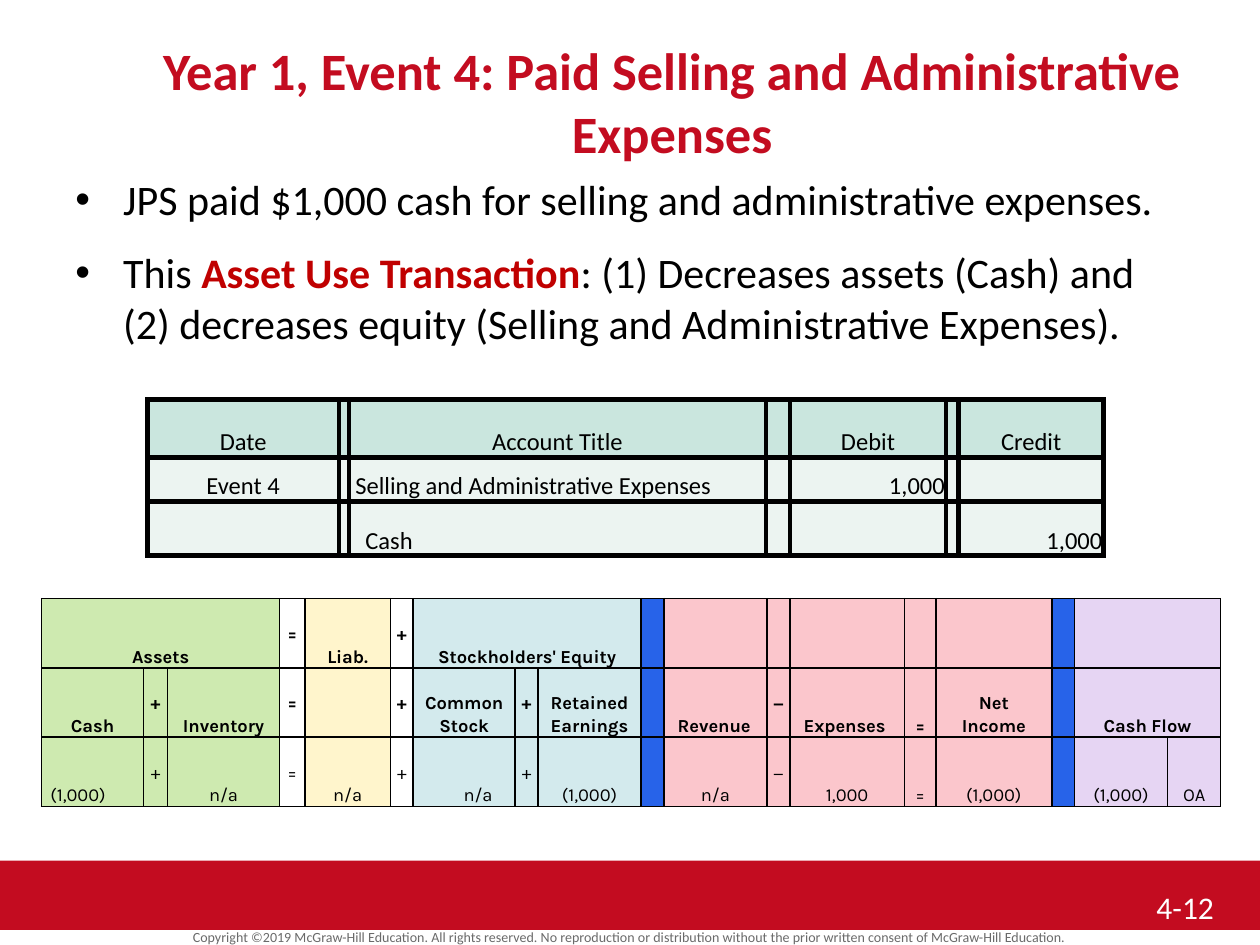
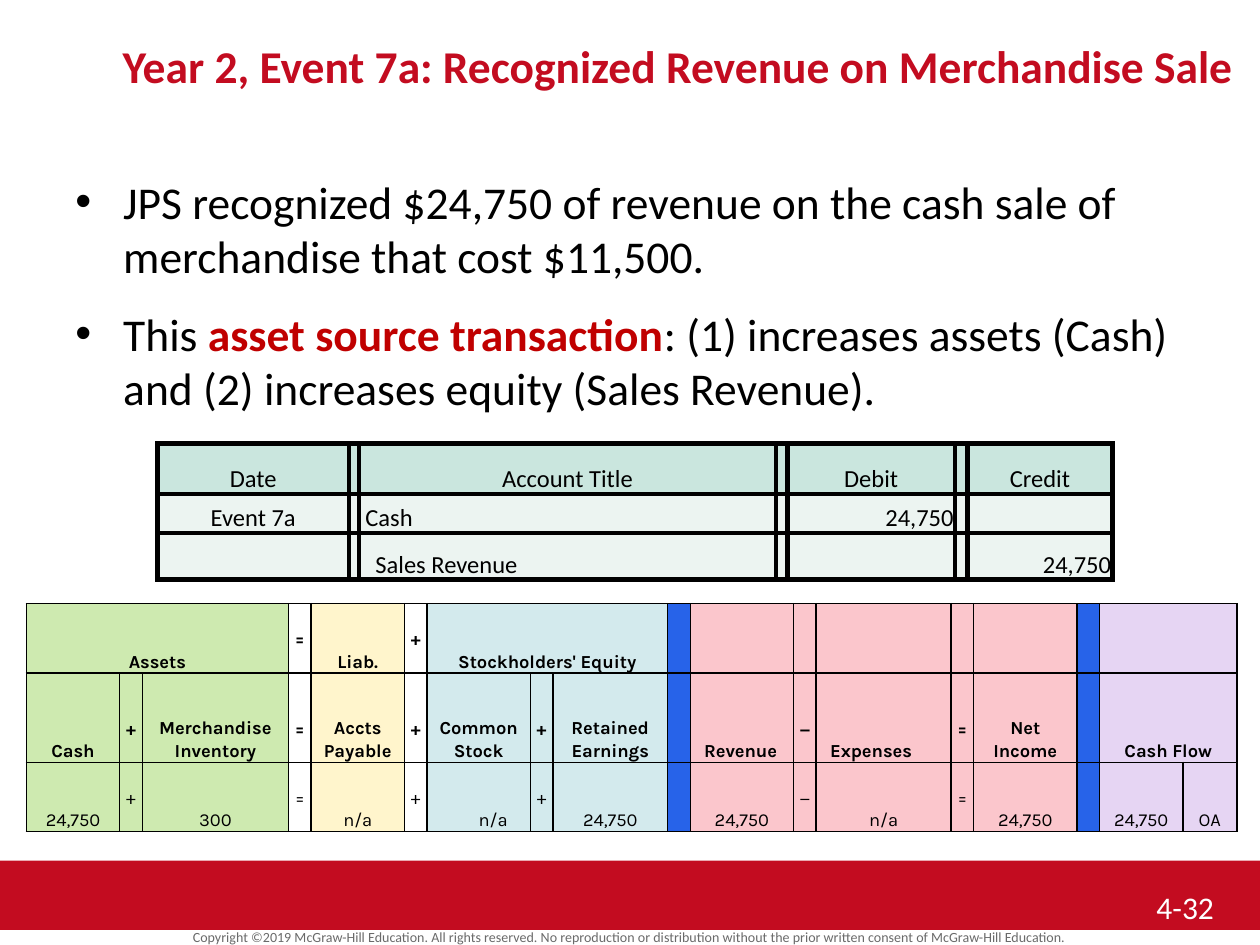
from lxml import etree
from pptx import Presentation
from pptx.dml.color import RGBColor
from pptx.enum import shapes, text
from pptx.oxml import ns
from pptx.util import Inches, Pt

COLORS = {
    "red": "C30C20", "accent": "C00000", "black": "000000", "white": "FFFFFF",
    "grey": "6A6A6A", "head": "CAE6DE", "entry": "ECF4F1", "asset": "CEEAB0",
    "liab": "FFF5CC", "equity": "D3EAED", "divider": "2763E9",
    "income": "FBC6CC", "flow": "E6D5F3",
}
LEFT, CENTER, RIGHT = text.PP_ALIGN.LEFT, text.PP_ALIGN.CENTER, text.PP_ALIGN.RIGHT
COPYRIGHT = ("Copyright ©2019 McGraw-Hill Education. All rights reserved. No reproduction "
             "or distribution without the prior written consent of McGraw-Hill Education.")

# Ledger columns: fill, operators and headings shared by both slides
LEDGER_FILLS = (["asset"] * 3 + [None, "liab", None] + ["equity"] * 3 + ["divider"]
                + ["income"] * 5 + ["divider"] + ["flow"] * 2)
OPERATORS = {1: "+", 3: "=", 5: "+", 7: "+", 11: "−", 13: "="}
GROUPS = {0: "Assets", 3: "=", 4: "Liab.", 5: "+", 6: "Stockholders' Equity"}
HEADINGS = {0: "Cash", 6: "Common\vStock", 8: "Retained\vEarnings", 10: "Revenue",
            12: "Expenses", 14: "Net\vIncome", 16: "Cash Flow"}
SPANS = [(0, 0, 2), (0, 6, 8), (0, 16, 17), (1, 16, 17)]

SLIDES = [
    {
        "number": "4-12", "title": "Year 1, Event 4: Paid Selling and Administrative Expenses",
        "title_size": 30, "title_left": 0.75, "body_size": 24,
        "bullets": [
            ["JPS paid $1,000 cash for selling and administrative expenses."],
            ["This ", "Asset Use Transaction", ": (1) Decreases assets (Cash) and (2) decreases "
             "equity (Selling and Administrative Expenses)."],
        ],
        "journal_at": (1.17, 3.17), "journal_rows": [0.46, 0.35, 0.43],
        "journal_cols": [1.52, 0.08, 3.31, 0.19, 1.24, 0.1, 1.15],
        "event": "Event 4", "debit": "Selling and Administrative Expenses",
        "credit": "Cash", "amount": "1,000",
        "ledger_at": (0.33, 4.75), "ledger_rows": [0.55, 0.55, 0.55],
        "ledger_cols": [0.81, 0.19, 0.89, 0.2, 0.68, 0.18, 0.81, 0.18, 0.82, 0.18,
                        0.82, 0.18, 0.91, 0.25, 0.92, 0.18, 0.74, 0.42],
        "headings": {2: "Inventory"},
        "effects": {0: "(1,000)", 2: "n/a", 4: "n/a", 6: "n/a", 8: "(1,000)", 10: "n/a",
                    12: "1,000", 14: "(1,000)", 16: "(1,000)", 17: "OA"},
        "cash_align": LEFT,
    },
    {
        "number": "4-32", "title": "Year 2, Event 7a: Recognized Revenue on Merchandise Sale",
        "title_size": 26, "title_left": 0.8, "body_size": 26,
        "bullets": [
            ["JPS recognized $24,750 of revenue on the cash sale of merchandise "
             "that cost $11,500."],
            ["This ", "asset source transaction", ": (1) increases assets (Cash) and "
             "(2) increases equity (Sales Revenue)."],
        ],
        "journal_at": (1.25, 3.52), "journal_rows": [0.4, 0.31, 0.37],
        "journal_cols": [1.52, 0.08, 3.31, 0.09, 1.33, 0.1, 1.15],
        "event": "Event 7a", "debit": "Cash", "credit": "Sales Revenue", "amount": "24,750",
        "ledger_at": (0.21, 4.79), "ledger_rows": [0.55, 0.71, 0.55],
        "ledger_cols": [0.74, 0.18, 1.16, 0.18, 0.74, 0.18, 0.82, 0.18, 0.91, 0.18,
                        0.82, 0.18, 1.07, 0.18, 0.82, 0.18, 0.66, 0.43],
        "headings": {2: "Merchandise\vInventory", 4: "Accts\vPayable"},
        "effects": {0: "24,750", 2: "300", 4: "n/a", 6: "n/a", 8: "24,750", 10: "24,750",
                    12: "n/a", 14: "24,750", 16: "24,750", 17: "OA"},
        "cash_align": CENTER,
    },
]


def write(tf, runs, size, color, align=LEFT, bold=False, font="Calibri", p=None):
    """Fill one paragraph; a second run is the red, bold key term."""
    tf.word_wrap = True
    p = p or tf.paragraphs[0]
    p.alignment = align
    if len(runs) == 1:
        p.text = runs[0]
    else:
        for part in runs:
            p.add_run().text = part
    for i, r in enumerate(p.runs):
        key = len(runs) > 1 and i == 1
        r.font.name, r.font.size, r.font.bold = font, Pt(size), bold or key
        r.font.color.rgb = RGBColor.from_string(COLORS["accent" if key else color])
    return p


def add_grid(s, at, cols, rows, line):
    """Add a plain table with black borders on every cell."""
    table = s.shapes.add_table(len(rows), len(cols), Inches(at[0]), Inches(at[1]),
                               Inches(sum(cols)), Inches(sum(rows))).table
    table.first_row = table.horz_banding = False
    for col, width in zip(table.columns, cols):
        col.width = Inches(width)
    for row, height in zip(table.rows, rows):
        row.height = Inches(height)
    for cell in table.iter_cells():
        cell.vertical_anchor = text.MSO_ANCHOR.BOTTOM
        cell.margin_left = cell.margin_right = Inches(0.01)
        cell.margin_top = cell.margin_bottom = 0
        cell.fill.background()
        tc_pr = cell._tc.get_or_add_tcPr()
        for i, side in enumerate(("lnL", "lnR", "lnT", "lnB")):
            ln = etree.Element(ns.qn("a:" + side), w=str(Pt(line)))
            fill = etree.SubElement(ln, ns.qn("a:solidFill"))
            etree.SubElement(fill, ns.qn("a:srgbClr"), val=COLORS["black"])
            tc_pr.insert(i, ln)
    return table


prs = Presentation()
prs.slide_width, prs.slide_height = Inches(10), Inches(7.5)

for data in SLIDES:
    s = prs.slides.add_slide(prs.slide_layouts[6])

    # Red band, copyright line and slide number
    sp = s.shapes.add_shape(shapes.MSO_SHAPE.RECTANGLE, 0, Inches(6.83), Inches(10), Inches(0.55))
    sp.shadow.inherit = False
    sp.fill.solid()
    sp.fill.fore_color.rgb = RGBColor.from_string(COLORS["red"])
    sp.line.fill.background()
    tf = s.shapes.add_textbox(0, Inches(7.34), Inches(10), Inches(0.19)).text_frame
    tf.margin_top = tf.margin_bottom = 0
    tf.vertical_anchor = text.MSO_ANCHOR.MIDDLE
    write(tf, [COPYRIGHT], 8, "grey", CENTER)
    tf = s.shapes.add_textbox(Inches(9.08), Inches(7), Inches(0.92), Inches(0.42)).text_frame
    write(tf, [data["number"]], 18, "white")

    # Title
    tf = s.shapes.add_textbox(Inches(data["title_left"]), Inches(0.25),
                              Inches(9.17), Inches(0.67)).text_frame
    write(tf, [data["title"]], data["title_size"], "red", CENTER, bold=True)

    # Bullets
    tf = s.shapes.add_textbox(Inches(0.5), Inches(1.33), Inches(9), Inches(5.17)).text_frame
    for i, runs in enumerate(data["bullets"]):
        p = tf.add_paragraph() if i else tf.paragraphs[0]
        p_pr = p._p.get_or_add_pPr()
        p_pr.set("marL", str(Inches(0.38)))
        p_pr.set("indent", str(Inches(-0.38)))
        etree.SubElement(p_pr, ns.qn("a:buFont"), typeface="Arial")
        etree.SubElement(p_pr, ns.qn("a:buChar"), char="•")
        p.space_before, p.space_after = Pt(5 if i else 0), Pt(8)
        write(tf, runs, data["body_size"], "black", p=p)

    # Journal entry: narrow empty columns separate the fields
    journal = add_grid(s, data["journal_at"], data["journal_cols"], data["journal_rows"], 3)
    entries = [["Date", "Account Title", "Debit", "Credit"],
               [data["event"], data["debit"], data["amount"], ""],
               ["", data["credit"], "", data["amount"]]]
    for r in range(3):
        for c in range(7):
            cell = journal.cell(r, c)
            cell.fill.solid()
            cell.fill.fore_color.rgb = RGBColor.from_string(COLORS["entry" if r else "head"])
            value = "" if c % 2 else entries[r][c // 2]
            if not value:
                continue
            align = CENTER if r == 0 or c == 0 else LEFT if c == 2 else RIGHT
            if align == LEFT:
                cell.margin_left = Inches(0.05 if r == 1 else 0.13)
            write(cell.text_frame, [value], 14, "black", align)

    # Financial statements effects
    widths = data["ledger_cols"]
    ledger = add_grid(s, data["ledger_at"], widths, data["ledger_rows"], 1)
    lines = [GROUPS, {**OPERATORS, **HEADINGS, **data["headings"]},
             {**OPERATORS, **data["effects"]}]
    for r, line in enumerate(lines):
        for c, fill in enumerate(LEDGER_FILLS):
            cell = ledger.cell(r, c)
            if fill:
                cell.fill.solid()
                cell.fill.fore_color.rgb = RGBColor.from_string(COLORS[fill])
            if c not in line:
                continue
            align = CENTER
            if c in OPERATORS:
                if widths[c] < 0.22:
                    cell.margin_bottom = Inches(0.18)
            else:
                cell.margin_left = cell.margin_right = Inches(0.07)
                if r == 1 and c in (10, 12):
                    align, cell.margin_left = LEFT, Inches(0.11)
                elif r == 2 and c == 0:
                    align = data["cash_align"]
                elif r == 2 and c == 6:
                    align, cell.margin_right = RIGHT, Inches(0.18)
            p = write(cell.text_frame, [line[c]], 10.5, "black", align, r < 2, "Karla")
            p.line_spacing = 1.07
    for r, first, last in SPANS:
        ledger.cell(r, first).merge(ledger.cell(r, last))

prs.save("out.pptx")
